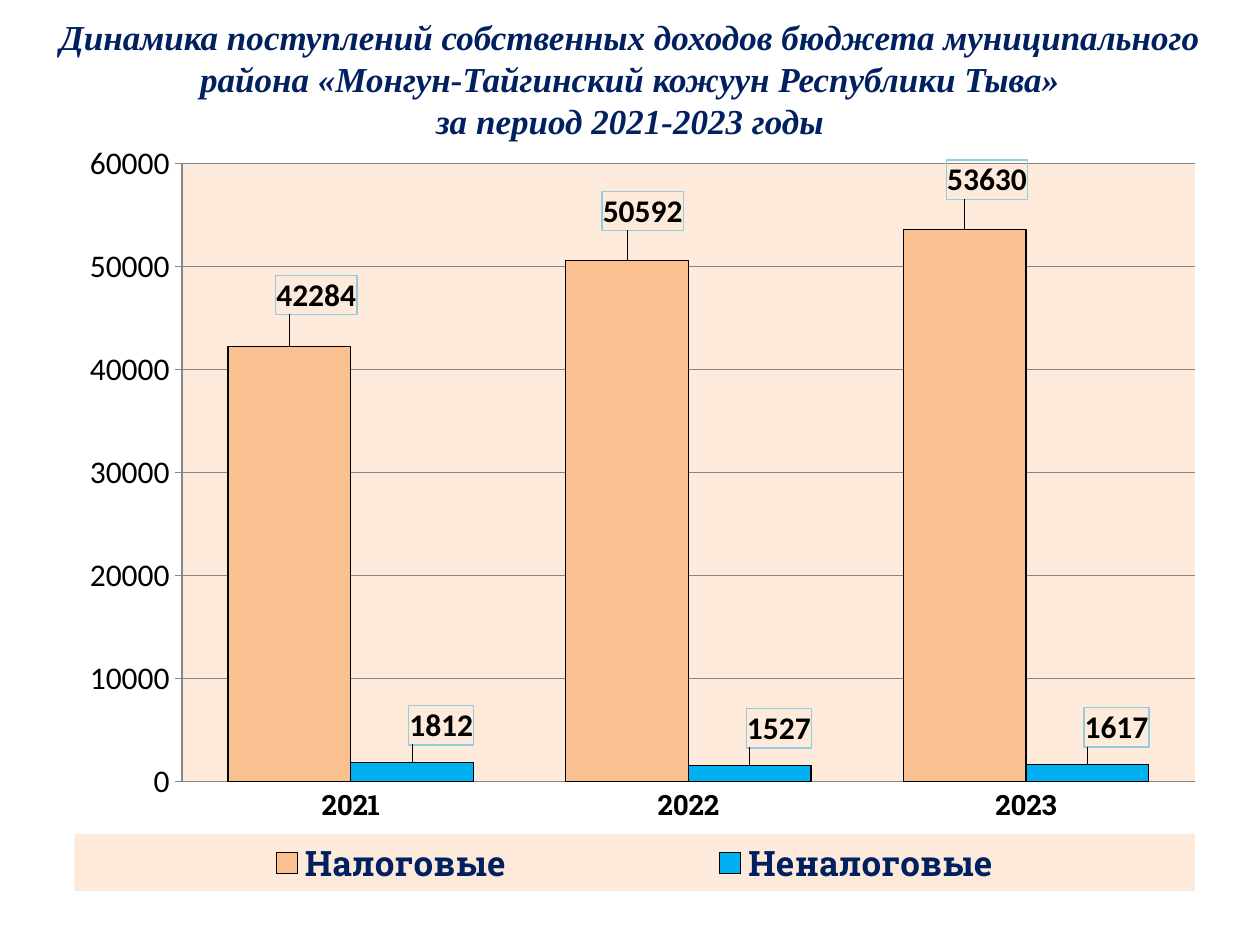
import pptx
import pptx.chart.data
import pptx.dml.color
import pptx.enum.chart
import pptx.enum.text
import pptx.oxml
import pptx.oxml.ns
import pptx.util

Cm = pptx.util.Cm
Pt = pptx.util.Pt
qn = pptx.oxml.ns.qn

NAVY, BLACK, GRAY = "002060", "000000", "868686"
PEACH, LABEL_BORDER = "FDEADA", "93CDDD"
TITLE = [
    "Динамика поступлений собственных доходов бюджета муниципального "
    "района «Монгун-Тайгинский кожуун Республики Тыва»",
    "за период 2021-2023 годы",
]
YEARS = ["2021", "2022", "2023"]
# Name, fill, values, label shifts as fractions of the chart
SERIES = [
    ("Налоговые", "FAC090", [42284, 50592, 53630],
     [(0.024, -0.035), (0.014, -0.033), (0.02, -0.033)]),
    ("Неналоговые", "00B0F0", [1812, 1527, 1617], [(0.026, -0.017)] * 3),
]


def color(value):
    return pptx.dml.color.RGBColor.from_string(value)


def style_font(font, name, size, value, bold=False, italic=False):
    font.name, font.size = name, Pt(size)
    font.bold, font.italic = bold, italic
    font.color.rgb = color(value)


def style_line(line, value, width=0.75):
    line.color.rgb = color(value)
    line.width = Pt(width)


def chart_xml(tag, content):
    return pptx.oxml.parse_xml(
        f'<c:{tag} {pptx.oxml.ns.nsdecls("c", "a")}>{content}</c:{tag}>')


def layout_xml(x, y, width=None, height=None, target=""):
    content = target
    if width:
        content += '<c:xMode val="edge"/><c:yMode val="edge"/>'
    content += f'<c:x val="{x}"/><c:y val="{y}"/>'
    if width:
        content += f'<c:w val="{width}"/><c:h val="{height}"/>'
    return chart_xml("layout", f"<c:manualLayout>{content}</c:manualLayout>")


def fill_xml(value):
    return chart_xml(
        "spPr", f'<a:solidFill><a:srgbClr val="{value}"/></a:solidFill>')


def set_layout(element, position, layout):
    for old in element.findall(qn("c:layout")):
        element.remove(old)
    element.insert(position, layout)


def add_title(page, left, top, width, height):
    box = page.shapes.title
    box.left, box.top, box.width, box.height = left, top, width, height
    frame = box.text_frame
    frame.word_wrap = True
    frame.auto_size = pptx.enum.text.MSO_AUTO_SIZE.NONE
    frame.vertical_anchor = pptx.enum.text.MSO_ANCHOR.MIDDLE
    frame.text = "\n".join(TITLE)
    for para in frame.paragraphs:
        para.alignment = pptx.enum.text.PP_ALIGN.CENTER
        para.space_before = Pt(0)
        for span in para.runs:
            style_font(span.font, "Times New Roman", 20, NAVY, True, True)


def style_axes(chart):
    years, values = chart.category_axis, chart.value_axis
    years.major_tick_mark = pptx.enum.chart.XL_TICK_MARK.NONE
    style_font(years.tick_labels.font, "Roboto Slab", 16, BLACK, True)
    values.minimum_scale, values.maximum_scale = 0, 60000
    values.major_unit = 10000
    values.major_tick_mark = pptx.enum.chart.XL_TICK_MARK.OUTSIDE
    style_font(values.tick_labels.font, "Calibri", 18, BLACK)
    for axis in (years, values):
        style_line(axis.format.line, GRAY)
    style_line(values.major_gridlines.format.line, GRAY)


def style_series(series, fill, shifts):
    series.format.fill.solid()
    series.format.fill.fore_color.rgb = color(fill)
    style_line(series.format.line, BLACK)
    series.invert_if_negative = False
    for index, shift in enumerate(shifts):
        label = series.points[index].data_label
        style_font(label.font, "Calibri", 18, BLACK, True)
        label.position = pptx.enum.chart.XL_LABEL_POSITION.OUTSIDE_END
    # Shifted labels with a thin border
    for element, shift in zip(series._element.iter(qn("c:dLbl")), shifts):
        for old in element.findall(qn("c:spPr")):
            element.remove(old)
        set_layout(element, 1, layout_xml(*shift))
        element.find(qn("c:txPr")).addprevious(chart_xml(
            "spPr", '<a:noFill/><a:ln w="9525"><a:solidFill>'
            f'<a:srgbClr val="{LABEL_BORDER}"/></a:solidFill></a:ln>'))


def style_legend(chart):
    chart.has_legend = True
    legend = chart.legend
    legend.position = pptx.enum.chart.XL_LEGEND_POSITION.BOTTOM
    legend.include_in_layout = False
    style_font(legend.font, "Roboto Slab", 20, NAVY, True)
    element = legend._element
    set_layout(element, 1, layout_xml(0, 0.92, 1, 0.075))
    element.find(qn("c:txPr")).addprevious(fill_xml(PEACH))


def add_income_chart(page, left, top, width, height):
    data = pptx.chart.data.CategoryChartData()
    data.categories = YEARS
    for name, fill, values, shifts in SERIES:
        data.add_series(name, values)
    chart = page.shapes.add_chart(
        pptx.enum.chart.XL_CHART_TYPE.COLUMN_CLUSTERED,
        left, top, width, height, data).chart
    style_font(chart.font, "Calibri", 18, BLACK)
    chart.has_title = False
    plot = chart.plots[0]
    plot.gap_width, plot.overlap = 75, 0
    plot.vary_by_categories = False
    for series, (name, fill, values, shifts) in zip(plot.series, SERIES):
        style_series(series, fill, shifts)
    style_axes(chart)
    style_legend(chart)
    # Plot area position and background
    area = chart._chartSpace.find(".//" + qn("c:plotArea"))
    set_layout(area, 0, layout_xml(
        0.096, 0.038, 0.904, 0.813, '<c:layoutTarget val="inner"/>'))
    area.append(fill_xml(PEACH))


def main():
    deck = pptx.Presentation()
    deck.slide_width, deck.slide_height = Cm(25.4), Cm(19.05)
    page = deck.slides.add_slide(deck.slide_layouts[5])
    add_title(page, Cm(0), Cm(0.13), Cm(25.4), Cm(2.9))
    add_income_chart(page, Cm(1.5), Cm(2.72), Cm(22.6), Cm(15.32))
    deck.save("out.pptx")


if __name__ == "__main__":
    main()
